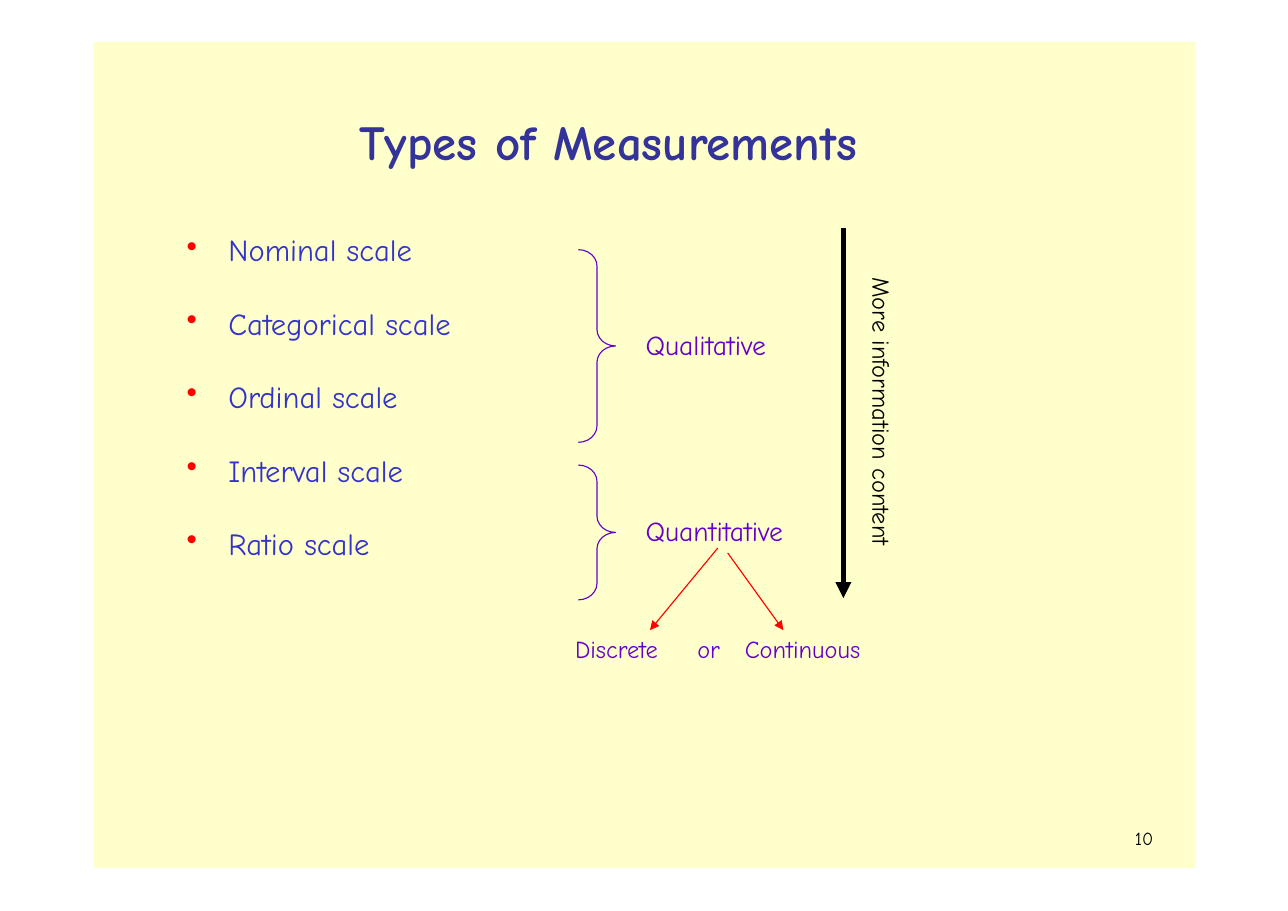
from lxml import etree
from pptx import Presentation
from pptx.dml.color import RGBColor
from pptx.enum.shapes import MSO_CONNECTOR, MSO_SHAPE
from pptx.enum.text import MSO_ANCHOR, MSO_AUTO_SIZE, PP_ALIGN
from pptx.oxml.ns import qn
from pptx.util import Inches, Pt

RECTANGLE, BRACE = MSO_SHAPE.RECTANGLE, MSO_SHAPE.RIGHT_BRACE
STRAIGHT = MSO_CONNECTOR.STRAIGHT
TOP, LEFT, NO_FIT = MSO_ANCHOR.TOP, PP_ALIGN.LEFT, MSO_AUTO_SIZE.NONE

CREAM = RGBColor(0xFF, 0xFF, 0xCC)
NAVY = RGBColor(0x33, 0x33, 0x9A)
BLUE = RGBColor(0x33, 0x33, 0xCC)
BRACE_PURPLE = RGBColor(0x66, 0x00, 0xCC)
PURPLE = RGBColor(0x65, 0x00, 0xCC)
RED = RGBColor(0xFF, 0x00, 0x00)
BLACK = RGBColor(0x00, 0x00, 0x00)

presentation = Presentation()
presentation.slide_width = Inches(11.69)
presentation.slide_height = Inches(8.27)
column = presentation.slide_width / 100
row = presentation.slide_height / 100
slide = presentation.slides.add_slide(presentation.slide_layouts[5])
shapes = slide.shapes


def place(left, top, width, height):
    return round(left * column), round(top * row), round(width * column), round(height * row)


def write(shape, lines, size, color, bold=False):
    frame = shape.text_frame
    frame.text = "\n".join(lines)
    frame.auto_size = NO_FIT
    frame.word_wrap = True
    frame.vertical_anchor = TOP
    frame.margin_left = frame.margin_right = frame.margin_bottom = 0
    frame.margin_top = Inches(0.02)
    for paragraph in frame.paragraphs:
        paragraph.alignment = LEFT
        font = paragraph.font
        font.name, font.size, font.bold = "Comic Neue", Pt(size), bold
        font.color.rgb = color
    return frame


panel = shapes.add_shape(RECTANGLE, *place(7.27, 4.6, 85.54, 90.69))
panel.shadow.inherit = False
panel.fill.solid()
panel.fill.fore_color.rgb = CREAM
panel.line.fill.background()

title = shapes.title
title.left, title.top, title.width, title.height = place(27.9, 11.97, 44.3, 6.77)
write(title, ["Types of Measurements"], 32, NAVY, True)
shapes._spTree.append(title._element)

scales = ["Nominal scale", "Categorical scale", "Ordinal scale", "Interval scale", "Ratio scale"]
scale_list = shapes.add_textbox(*place(14.4, 25.15, 24, 36.64))
scale_frame = write(scale_list, scales, 20, BLUE)
for index, paragraph in enumerate(scale_frame.paragraphs):
    paragraph.space_before = Pt(24 if index else 0)
    properties = paragraph._p.get_or_add_pPr()
    properties.set("marL", str(Inches(0.39)))
    properties.set("indent", str(-Inches(0.38)))
    bullet_color = etree.Element(qn("a:buClr"))
    etree.SubElement(bullet_color, qn("a:srgbClr"), val=str(RED))
    font_properties = properties.find(qn("a:defRPr"))
    font_properties.addprevious(bullet_color)
    font_properties.addprevious(etree.Element(qn("a:buChar"), char="•"))

for top, height in [(27.4, 21.15), (51.05, 14.8)]:
    brace = shapes.add_shape(BRACE, *place(44.9, top, 2.9, height))
    brace.shadow.inherit = False
    brace.fill.background()
    brace.line.color.rgb = BRACE_PURPLE
    brace.line.width = Pt(0.75)
    brace.adjustments[0] = 0.44

labels = [
    ("Qualitative", 50.13, 35.8, 13, 4, 18, PURPLE),
    ("Quantitative", 50.13, 56.23, 14, 4, 18, PURPLE),
    ("10", 88.11, 90.57, 3, 3, 12, BLACK),
]
for text, left, top, width, height, size, color in labels:
    write(shapes.add_textbox(*place(left, top, width, height)), [text], size, color)

content_label = shapes.add_textbox(*place(66.72, 30.23, 2.91, 34))
content_frame = write(content_label, ["More information content"], 16, BLACK)
content_frame._txBody.bodyPr.set("vert", "vert")

kinds = shapes.add_textbox(*place(44.65, 69.4, 25, 3.63))
kinds_frame = write(kinds, ["Discrete\tor\tContinuous"], 16, PURPLE)
tab_list = etree.Element(qn("a:tabLst"))
for stop in (1.11, 1.54):
    etree.SubElement(tab_list, qn("a:tab"), pos=str(Inches(stop)), algn="l")
kinds_properties = kinds_frame.paragraphs[0]._p.get_or_add_pPr()
kinds_properties.find(qn("a:defRPr")).addprevious(tab_list)

arrows = [
    (65.48, 25.03, 65.48, 65.66, 3.5, BLACK),
    (55.73, 60.16, 50.47, 69.17, 0.75, RED),
    (56.5, 60.7, 60.82, 69.17, 0.75, RED),
]
for *ends, width, color in arrows:
    arrow = shapes.add_connector(STRAIGHT, *place(*ends))
    arrow.line.width = Pt(width)
    arrow.line.color.rgb = color
    etree.SubElement(arrow.line._get_or_add_ln(), qn("a:tailEnd"), type="triangle")
    etree.SubElement(arrow._element.spPr, qn("a:effectLst"))

presentation.save("out.pptx")
